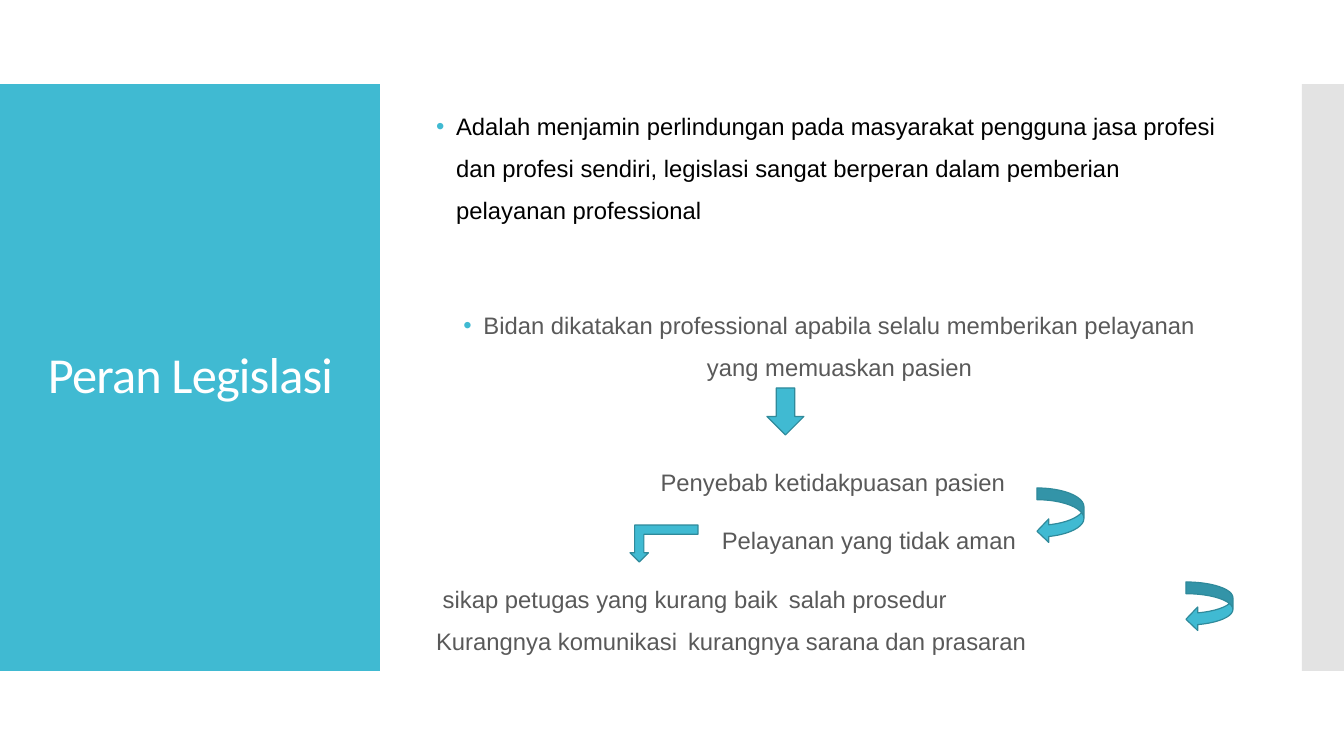
from lxml.etree import SubElement
from pptx import Presentation
from pptx.dml.color import RGBColor
from pptx.enum.shapes import MSO_SHAPE
from pptx.enum.text import MSO_ANCHOR, MSO_AUTO_SIZE, PP_ALIGN
from pptx.oxml.ns import qn
from pptx.util import Pt

WIDTH, HEIGHT = 1344, 756
SCALE = 12192000 / WIDTH
COLORS = {
    "teal": "40BAD2", "edge": "2F8A9B", "gray": "C8C8C8",
    "white": "FFFFFF", "black": "000000", "text": "595959",
}
TITLE = {"size": Pt(36), "name": "Calibri", "bold": False}
BODY = {"size": Pt(17), "name": "Arial", "bold": False}
FRAME = {
    "word_wrap": True, "auto_size": MSO_AUTO_SIZE.NONE,
    "vertical_anchor": MSO_ANCHOR.MIDDLE,
}
LEFT, MID = PP_ALIGN.LEFT, PP_ALIGN.CENTER

# text, alignment, colour, space before (pt), margin (px), bullet, tab (px)
LINES = [
    ("Adalah menjamin perlindungan pada masyarakat pengguna jasa profesi "
     "dan profesi sendiri, legislasi sangat berperan dalam pemberian "
     "pelayanan professional", LEFT, "black", 0, 20, True, 0),
    ("Bidan dikatakan professional apabila selalu memberikan pelayanan "
     "yang memuaskan pasien", MID, "text", 52.5, 20, True, 0),
    ("Penyebab ketidakpuasan pasien", MID, "text", 52.5, 7, False, 0),
    ("Pelayanan yang tidak aman", MID, "text", 12, 79, False, 0),
    (" sikap petugas yang kurang baik\tsalah prosedur",
     LEFT, "text", 12, 0, False, 520),
    ("Kurangnya komunikasi\tkurangnya sarana dan prasaran",
     LEFT, "text", 0, 0, False, 393),
]

# shape, box inside the body, rotation
ARROWS = [
    (MSO_SHAPE.DOWN_ARROW, (341, 293, 37, 47), 0),
    (MSO_SHAPE.CURVED_LEFT_ARROW, (611, 393, 47, 55), 0),
    (MSO_SHAPE.CURVED_LEFT_ARROW, (760, 487, 47, 49), 0),
    (MSO_SHAPE.BENT_UP_ARROW, (204, 430, 68, 37), 180),
]


def px(n):
    return round(n * SCALE)


def rgb(name):
    return RGBColor.from_string(COLORS[name])


def apply(item, values):
    for key, value in values.items():
        setattr(item, key, value)


def place(item, box):
    apply(item, dict(zip(("left", "top", "width", "height"), map(px, box))))


def draw(slide, kind, box, fill, edge=None):
    shape = slide.shapes.add_shape(kind, *map(px, box))
    shape.shadow.inherit = False
    shape.fill.solid()
    shape.fill.fore_color.rgb = rgb(fill)
    if edge:
        shape.line.color.rgb = rgb(edge)
        shape.line.width = Pt(0.85)
    else:
        shape.line.fill.background()
    return shape


def write(para, text, style, color):
    run = para.add_run()
    run.text = text
    apply(run.font, style)
    run.font.color.rgb = rgb(color)
    return run


def indent(para, margin, bullet, tab):
    """Set margin, bullet and tab stop, in the order the schema wants."""
    props = para._p.get_or_add_pPr()
    props.set("marL", str(px(margin)))
    props.set("indent", str(px(-margin if bullet else 0)))
    if bullet:
        tint = SubElement(props, qn("a:buClr"))
        SubElement(tint, qn("a:srgbClr"), val=COLORS["teal"])
        SubElement(props, qn("a:buFont"), typeface="Arial")
        SubElement(props, qn("a:buChar"), char="•")
    else:
        SubElement(props, qn("a:buNone"))
    if tab:
        stops = SubElement(props, qn("a:tabLst"))
        SubElement(stops, qn("a:tab"), pos=str(px(tab)), algn="l")


def panels(slide, box):
    """Draw the side bands behind the placeholders."""
    x, y, w, h = box
    side = draw(slide, MSO_SHAPE.RECTANGLE, (x, y, 380, h), "teal")
    edge = draw(slide, MSO_SHAPE.RECTANGLE, (x + w - 42, y, 42, h), "gray")
    tint = edge.fill._xPr.find(".//" + qn("a:srgbClr"))
    SubElement(tint, qn("a:alpha"), val="50000")
    for band in (side, edge):
        slide.shapes.title.element.addprevious(band.element)


def heading(slide, box):
    title = slide.shapes.title
    place(title, box)
    apply(title.text_frame, FRAME)
    para = title.text_frame.paragraphs[0]
    apply(para, {"alignment": MID, "line_spacing": 0.9})
    run = write(para, "Peran Legislasi", TITLE, "white")
    run.font._element.set("spc", "-60")


def content(slide, box):
    body = slide.placeholders[1]
    place(body, box)
    frame = body.text_frame
    apply(frame, FRAME)
    for i, (text, align, color, gap, margin, bullet, tab) in enumerate(LINES):
        para = frame.add_paragraph() if i else frame.paragraphs[0]
        apply(para, {"alignment": align, "line_spacing": 1.46,
                     "space_before": Pt(gap), "space_after": Pt(0)})
        indent(para, margin, bullet, tab)
        write(para, text, BODY, color)
    for kind, (x, y, w, h), turn in ARROWS:
        spot = (box[0] + x, box[1] + y, w, h)
        draw(slide, kind, spot, "teal", "edge").rotation = turn


def main():
    deck = Presentation()
    apply(deck, {"slide_width": px(WIDTH), "slide_height": px(HEIGHT)})
    slide = deck.slides.add_slide(deck.slide_layouts[1])
    panels(slide, (0, 84, WIDTH, 587))
    heading(slide, (28, 124, 325, 507))
    content(slide, (426, 95, 807, 564))
    deck.save("out.pptx")


if __name__ == "__main__":
    main()
